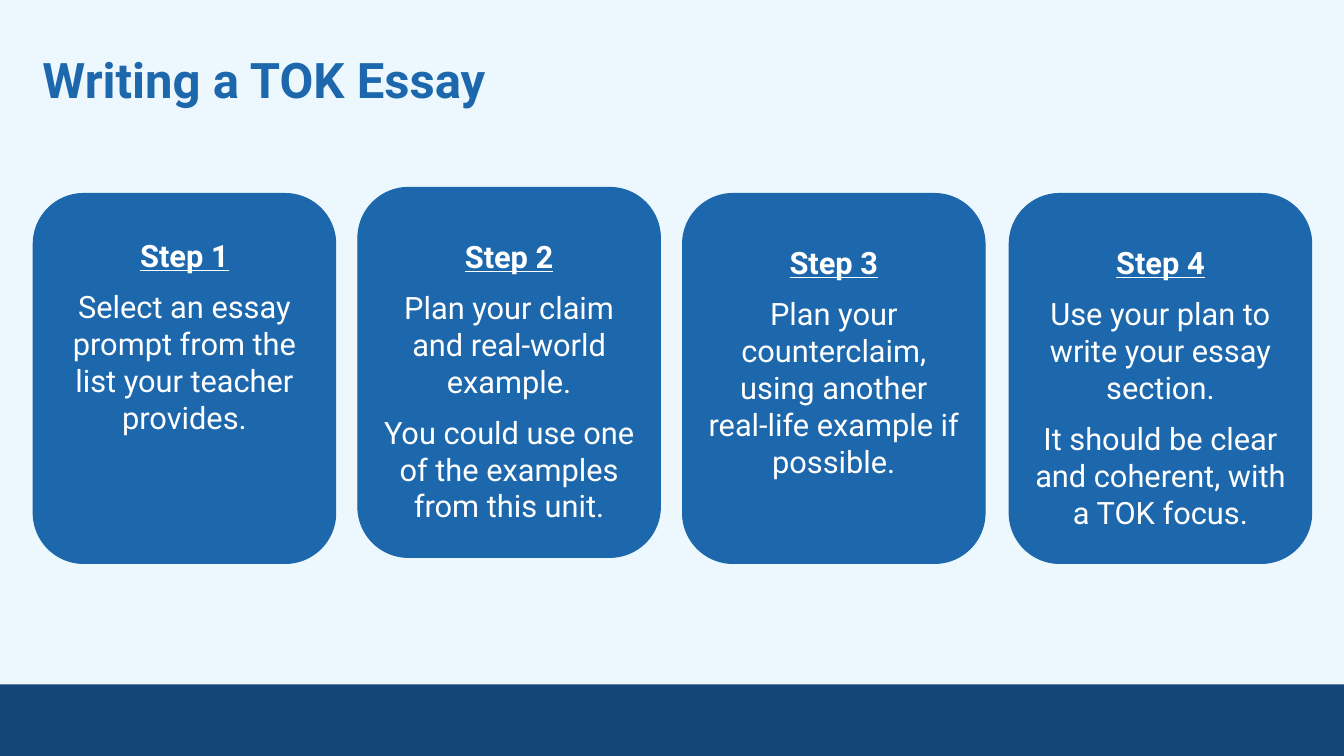
from pptx import Presentation
from pptx.dml.color import RGBColor
from pptx.enum.shapes import MSO_SHAPE as Shape
from pptx.enum.text import MSO_ANCHOR as Anchor, PP_ALIGN as Align
from pptx.util import Inches, Pt

PALE = RGBColor(0xEC, 0xF8, 0xFE)
BLUE = RGBColor(0x1D, 0x67, 0xAC)
NAVY = RGBColor(0x14, 0x47, 0x77)
WHITE = RGBColor(0xFF, 0xFF, 0xFF)
FONT = "Roboto"

# Left, top, space above the text, then the paragraphs below the heading
STEPS = [
    (0.33, 1.92, 0.28, ["Select an essay prompt from the list your teacher provides."]),
    (3.55, 1.86, 0.35, ["Plan your claim and real-world example.",
                        "You could use one of the examples from this unit."]),
    (6.77, 1.92, 0.35, ["Plan your counterclaim, using another real-life example if possible."]),
    (10.01, 1.92, 0.35, ["Use your plan to write your essay section.",
                         "It should be clear and coherent, with a TOK focus."]),
]

deck = Presentation()
deck.slide_width = Inches(13.33)
deck.slide_height = Inches(7.5)
page = deck.slides.add_slide(deck.slide_layouts[6])
page.background.fill.solid()
page.background.fill.fore_color.rgb = PALE

# Footer band
band = page.shapes.add_shape(Shape.RECTANGLE, Inches(-0.02), Inches(6.79),
                             Inches(13.37), Inches(0.71))
band.shadow.inherit = False
band.fill.solid()
band.fill.fore_color.rgb = NAVY
band.line.fill.background()

# Title
title = page.shapes.add_textbox(Inches(0.29), Inches(0.35), Inches(12.19), Inches(0.86))
frame = title.text_frame
frame.word_wrap = True
frame.vertical_anchor = Anchor.MIDDLE
frame.margin_left = frame.margin_right = Inches(0.13)
frame.margin_top = frame.margin_bottom = Inches(0.13)
frame.text = "Writing a TOK Essay"
font = frame.paragraphs[0].runs[0].font
font.name, font.size, font.bold = FONT, Pt(35), True
font.color.rgb = BLUE

# Step cards
for number, (left, top, space_above, details) in enumerate(STEPS, start=1):
    card = page.shapes.add_shape(Shape.ROUNDED_RECTANGLE, Inches(left), Inches(top),
                                 Inches(3), Inches(3.67))
    card.adjustments[0] = 0.167
    card.shadow.inherit = False
    card.fill.solid()
    card.fill.fore_color.rgb = BLUE
    card.line.color.rgb = BLUE
    card.line.width = Pt(0.75)

    frame = card.text_frame
    frame.word_wrap = True
    frame.vertical_anchor = Anchor.TOP
    frame.margin_left = frame.margin_right = frame.margin_bottom = Inches(0.1)
    frame.margin_top = Inches(space_above)
    frame.text = "\n".join([f"Step {number}", *details])
    for index, para in enumerate(frame.paragraphs):
        is_heading = index == 0
        para.alignment = Align.CENTER
        para.space_before = Pt(0 if is_heading else 10)
        font = para.runs[0].font
        font.name, font.size = FONT, Pt(22)
        font.bold = font.underline = is_heading
        font.color.rgb = WHITE

deck.save("out.pptx")
